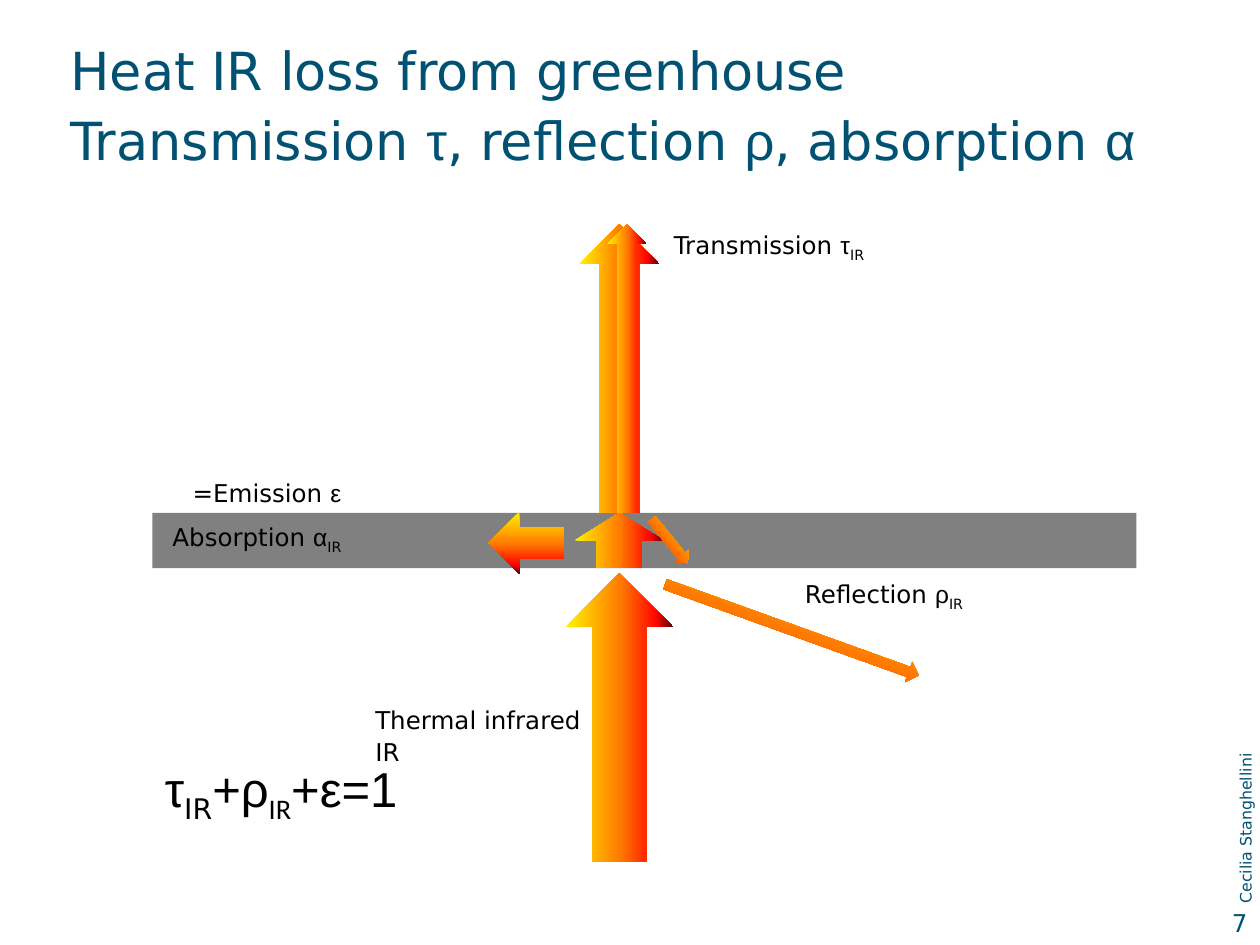
from dataclasses import dataclass
from typing import NamedTuple

from lxml import etree
from pptx import Presentation
from pptx.dml.color import RGBColor
from pptx.enum import shapes, text
from pptx.oxml.ns import qn
from pptx.util import Inches, Pt


@dataclass(frozen=True)
class Theme:
    teal: str = "005172"
    black: str = "000000"
    cover: str = "808080"
    heat: tuple = ((0, "FFF200"), (51, "FF7A00"), (85, "FF0300"), (100, "4D0808"))
    title: int = 30
    formula: int = 28
    body: int = 14
    credit: int = 9
    latin: str = "DejaVu Sans"
    greek: str = "Arial"
    formula_index: str = "Calibri"


THEME = Theme()


class Box(NamedTuple):
    left: float
    top: float
    width: float
    height: float

    def emu(self) -> list:
        return [Inches(value) for value in self]


class Part(NamedTuple):
    words: str
    font: str = THEME.latin
    subscript: bool = False


class Arrow(NamedTuple):
    box: Box
    rotation: float = 0
    upward: bool = True


@dataclass(frozen=True)
class Label:
    box: Box
    paragraphs: list
    size: int = THEME.body
    color: str = THEME.black
    spacing: int = 18
    wrap: bool = False
    rotation: float = 0
    align: text.PP_ALIGN = text.PP_ALIGN.LEFT
    insets: tuple = (0.1, 0.05, 0.1, 0.05)


def greek(letters: str) -> Part:
    return Part(letters, THEME.greek)


def index(font: str = THEME.latin) -> Part:
    return Part("IR", font, subscript=True)


def add_label(slide, label: Label) -> None:
    box = slide.shapes.add_textbox(*label.box.emu())
    box.rotation = label.rotation
    frame = box.text_frame
    left, top, right, bottom = map(Inches, label.insets)
    frame_format = {
        "margin_left": left, "margin_top": top,
        "margin_right": right, "margin_bottom": bottom,
        "word_wrap": label.wrap,
        "auto_size": text.MSO_AUTO_SIZE.SHAPE_TO_FIT_TEXT,
    }
    for name, value in frame_format.items():
        setattr(frame, name, value)
    for number, parts in enumerate(label.paragraphs):
        paragraph = frame.add_paragraph() if number else frame.paragraphs[0]
        paragraph.alignment = label.align
        paragraph.line_spacing = Pt(label.spacing)
        for part in parts:
            add_part(paragraph, part, label)


def add_part(paragraph, part: Part, label: Label) -> None:
    """Add one run, or a line break where the words are a newline."""
    if part.words == "\n":
        paragraph.add_line_break()
        return
    run = paragraph.add_run()
    run.text = part.words
    for name, value in {"name": part.font, "size": Pt(label.size)}.items():
        setattr(run.font, name, value)
    run.font.color.rgb = RGBColor.from_string(label.color)
    if part.subscript:
        run.font._element.set("baseline", "-25000")


def add_plain_shape(slide, preset: shapes.MSO_SHAPE, box: Box):
    shape = slide.shapes.add_shape(preset, *box.emu())
    shape.shadow.inherit = False
    shape.line.fill.background()
    return shape


def add_cover(slide, box: Box) -> None:
    cover = add_plain_shape(slide, shapes.MSO_SHAPE.RECTANGLE, box)
    cover.fill.solid()
    cover.fill.fore_color.rgb = RGBColor.from_string(THEME.cover)


def add_heat_arrow(slide, arrow: Arrow) -> None:
    shape = add_plain_shape(slide, shapes.MSO_SHAPE.DOWN_ARROW, arrow.box)
    shape.rotation = arrow.rotation
    properties = shape._element.spPr
    if arrow.upward:
        properties.find(qn("a:xfrm")).set("flipV", "1")
    shape.fill.gradient()
    shape.fill.gradient_angle = 0
    stops = properties.find(qn("a:gradFill")).find(qn("a:gsLst"))
    for stop in list(stops):
        stops.remove(stop)
    for percent, color in THEME.heat:
        stop = etree.SubElement(stops, qn("a:gs"), pos=str(percent * 1000))
        etree.SubElement(stop, qn("a:srgbClr"), val=color)


COVER = Box(1.21, 4.07, 7.81, 0.44)

ARROWS = [
    Arrow(Box(4.49, 4.55, 0.85, 2.29)),
    Arrow(Box(4.56, 4.07, 0.71, 0.44)),
    Arrow(Box(4.6, 1.78, 0.63, 2.29)),
    Arrow(Box(5.24, 4.07, 0.15, 0.45), 140.8),
    Arrow(Box(4.11, 4.01, 0.14, 0.6), 90, upward=False),
    Arrow(Box(6.2, 3.93, 0.17, 2.14), 109.8),
    Arrow(Box(4.82, 1.78, 0.31, 2.29)),
    Arrow(Box(3.93, 4.01, 0.49, 0.6), 90, upward=False),
]

LABELS = [
    Label(Box(7.47, 7.14, 2.53, 0.35), [[Part("7")]], color=THEME.teal,
          wrap=True, align=text.PP_ALIGN.RIGHT),
    Label(Box(9.11, 6.37, 1.45, 0.35), [[Part("Cecilia Stanghellini")]],
          size=THEME.credit, color=THEME.teal, wrap=True, rotation=270),
    Label(Box(0.54, 0.25, 9.23, 1.48),
          [[Part("Heat IR loss from greenhouse"), Part("\n"),
            Part("Transmission "), greek("τ"), Part(", reflection "), greek("ρ"),
            Part(", absorption "), greek("α")]],
          size=THEME.title, color=THEME.teal, spacing=40, wrap=True,
          insets=(0.02, 0, 0.1, 0.35)),
    Label(Box(5.25, 1.79, 1.77, 0.35), [[Part("Transmission "), greek("τ"), index()]]),
    Label(Box(2.88, 5.53, 1.85, 0.61), [[Part("Thermal infrared")], [Part("IR")]]),
    Label(Box(6.29, 4.56, 1.49, 0.35), [[Part("Reflection "), greek("ρ"), index()]]),
    Label(Box(1.27, 4.11, 1.6, 0.35), [[Part("Absorption "), greek("α"), index()]]),
    Label(Box(1.21, 6.25, 2.11, 0.35),
          [[greek("τ"), index(), greek("+ρ"), index(THEME.formula_index),
            greek("+ε=1")]],
          size=THEME.formula),
    Label(Box(1.43, 3.73, 1.39, 0.35), [[Part("=Emission "), greek("ε")]]),
]


def main() -> None:
    deck = Presentation()
    deck.slide_width, deck.slide_height = Inches(10), Inches(7.5)
    slide = deck.slides.add_slide(deck.slide_layouts[6])
    add_cover(slide, COVER)
    for arrow in ARROWS:
        add_heat_arrow(slide, arrow)
    for label in LABELS:
        add_label(slide, label)
    deck.save("out.pptx")


if __name__ == "__main__":
    main()
